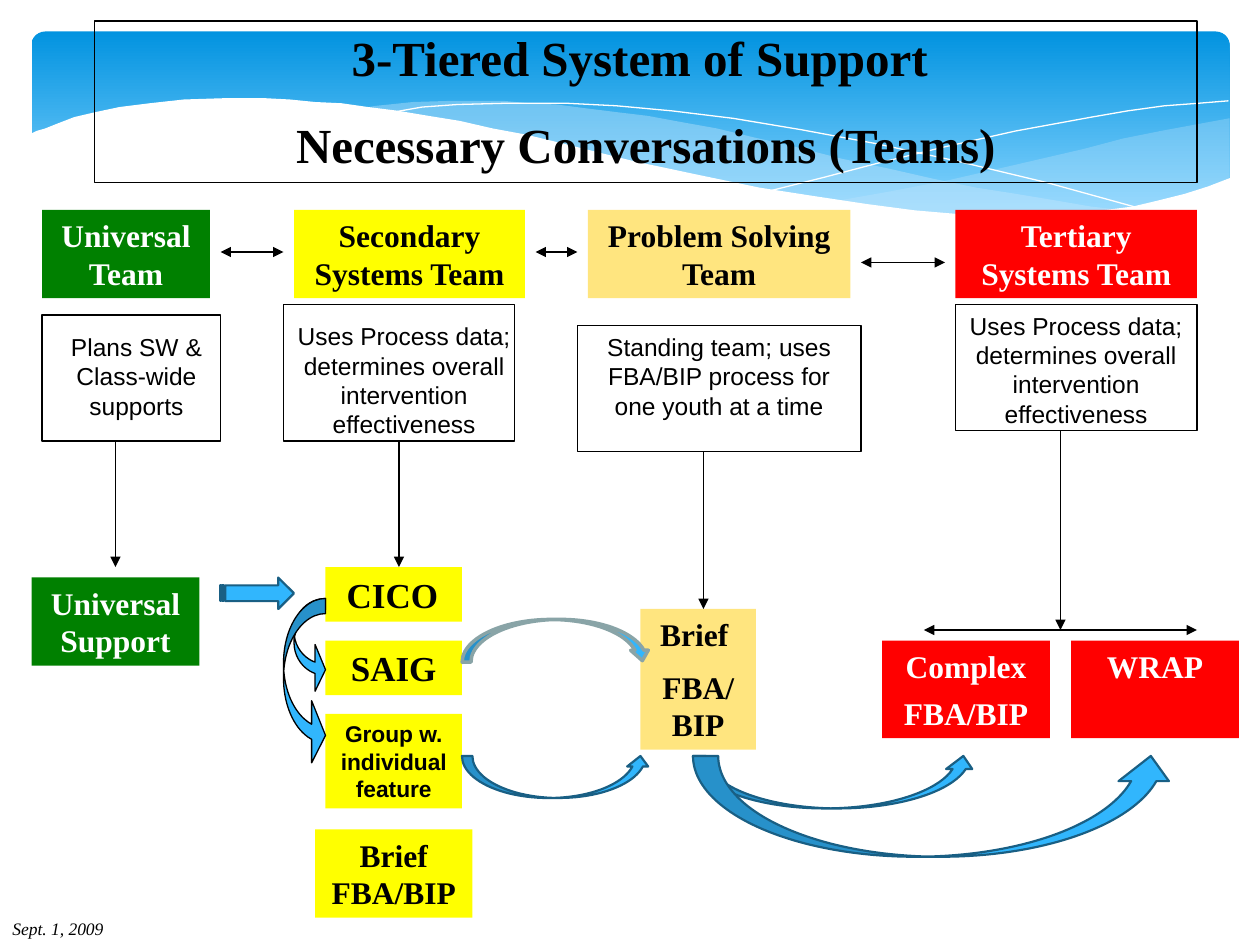
"""Build the slide of the 3-tiered support system and its teams."""
from lxml import etree
from pptx import Presentation
from pptx.dml.color import RGBColor
from pptx.enum.shapes import MSO_CONNECTOR, MSO_SHAPE as SHAPE
from pptx.enum.text import MSO_ANCHOR, MSO_AUTO_SIZE, PP_ALIGN as ALIGN
from pptx.oxml.ns import qn
from pptx.util import Inches, Pt

BLACK = RGBColor(0x00, 0x00, 0x00)
WHITE = RGBColor(0xFF, 0xFF, 0xFF)
GREEN = RGBColor(0x00, 0x80, 0x00)
YELLOW = RGBColor(0xFF, 0xFF, 0x00)
GOLD = RGBColor(0xFF, 0xCC, 0x00)
RED = RGBColor(0xFF, 0x00, 0x00)
SKY = RGBColor(0x31, 0xB6, 0xFD)
NAVY = RGBColor(0x19, 0x5F, 0x84)
GRAY = RGBColor(0x89, 0xA4, 0xA7)
DEEP = RGBColor(0x02, 0x93, 0xE0)
PALE = RGBColor(0x83, 0xD3, 0xFE)
MIST = RGBColor(0xC6, 0xE7, 0xFC)
SERIF, SANS = "Times New Roman", "Arial"
COLS, ROWS = 120, 90

RIGHT_WAVE = [(975, 94), (948, 99), (921, 104), (891, 110), (861, 118), (805, 131),
              (753, 143), (706, 152), (661, 160), (691, 164), (719, 167), (745, 169),
              (769, 171), (803, 172), (835, 172), (863, 170), (889, 166), (913, 162),
              (935, 156), (949, 152), (963, 147), (976, 141), (976, 94)]
MIDDLE_WAVE = [(893, 167), (866, 164), (837, 159), (807, 154), (775, 149), (741, 142),
               (706, 134), (668, 126), (629, 116), (598, 109), (569, 102), (541, 97),
               (514, 92), (489, 89), (465, 86), (442, 83), (420, 82), (399, 80),
               (361, 80), (328, 81), (299, 84), (286, 86), (323, 90), (362, 97),
               (404, 106), (449, 116), (491, 126), (530, 135), (566, 143), (601, 150),
               (634, 156), (665, 161), (695, 165), (722, 168), (748, 170), (773, 172),
               (807, 173), (838, 172), (867, 170), (893, 167)]
LONG_LINE = [(309, 90), (318, 88), (335, 85), (363, 83), (401, 82), (450, 82), (489, 84),
             (533, 88), (582, 94), (636, 103), (695, 114), (760, 128), (831, 145), (907, 166)]
SHORT_LINE = [(613, 151), (653, 141), (695, 130), (748, 117), (806, 104), (866, 93),
              (895, 88), (924, 84), (951, 82), (975, 80)]
WHITE_WAVE = [(977, 141), (959, 148), (940, 154), (920, 159), (899, 164), (875, 167),
              (850, 170), (823, 171), (793, 171), (761, 170), (726, 167), (688, 162),
              (648, 156), (603, 149), (555, 139), (503, 128), (447, 114), (418, 107),
              (391, 102), (365, 96), (340, 92), (316, 88), (292, 85), (271, 82),
              (250, 81), (230, 79), (211, 78), (177, 78), (146, 79), (119, 82),
              (95, 85), (76, 89), (59, 93), (46, 98), (36, 102), (29, 104), (23, 107),
              (23, 224), (977, 224)]


def write(tf, text, size=18, font=SERIF, color=BLACK, bold=False, italic=False,
          align=ALIGN.CENTER, gap=0):
    """Fill a text frame, one paragraph per line, with gap as a share of a line."""
    tf.word_wrap = True
    tf.auto_size = MSO_AUTO_SIZE.NONE
    tf.vertical_anchor = MSO_ANCHOR.TOP
    for i, line in enumerate(text.split("\n")):
        p = tf.add_paragraph() if i else tf.paragraphs[0]
        p.text, p.alignment = line, align
        if i:
            p.space_before = Pt(round(size * 1.15 * gap, 1))
        for r in p.runs:
            f = r.font
            f.name, f.size, f.bold, f.italic = font, Pt(size), bold, italic
            f.color.rgb = color


class Board:
    """Hold the current slide and draw on a grid of 120 columns and 90 rows."""

    def __init__(self, prs):
        """Add a slide with a title placeholder."""
        self.s = prs.slides.add_slide(prs.slide_layouts[5])
        self.col, self.row = prs.slide_width / COLS, prs.slide_height / ROWS

    def box(self, x, y, w, h):
        """Turn grid units into lengths."""
        return [int(x * self.col), int(y * self.row), int(w * self.col), int(h * self.row)]

    def paint(self, sp, fill=None, line=None, width=0.75, opacity=100):
        """Set fill, outline and opacity, without shadow."""
        sp.shadow.inherit = False
        if fill is None:
            sp.fill.background()
        else:
            sp.fill.solid()
            sp.fill.fore_color.rgb = fill
        if opacity < 100:
            color = sp.element.spPr.find(".//" + qn("a:srgbClr"))
            etree.SubElement(color, qn("a:alpha"), val=str(opacity * 1000))
        if line is None:
            sp.line.fill.background()
        else:
            sp.line.color.rgb, sp.line.width = line, Pt(width)
        return sp

    def shape(self, kind, at, adj=(), **style):
        """Draw a preset shape."""
        sp = self.s.shapes.add_shape(kind, *self.box(*at))
        for i, value in enumerate(adj):
            sp.adjustments[i] = value
        return self.paint(sp, **style)

    def wave(self, points, closed=True, **style):
        """Draw an outline from points in hundredths of an inch."""
        fb = self.s.shapes.build_freeform(*points[0], scale=Inches(0.01))
        fb.add_line_segments(points[1:], close=closed)
        return self.paint(fb.convert_to_shape(), **style)

    def title(self, at, text, **fmt):
        """Move the title placeholder to the front, frame it and fill it."""
        sp = self.s.shapes.title
        sp.element.getparent().append(sp.element)
        sp.left, sp.top, sp.width, sp.height = self.box(*at)
        sp.line.color.rgb, sp.line.width = BLACK, Pt(0.75)
        write(sp.text_frame, text, **fmt)

    def card(self, at, text, fill, opacity=100, **fmt):
        """Draw a filled rectangle with bold text."""
        sp = self.shape(SHAPE.RECTANGLE, at, fill=fill, opacity=opacity)
        write(sp.text_frame, text, bold=True, **fmt)

    def label(self, at, text, **fmt):
        """Add a text box."""
        write(self.s.shapes.add_textbox(*self.box(*at)).text_frame, text, **fmt)

    def arrow(self, x1, y1, x2, y2, both=False, source=None):
        """Draw a straight arrow, joined to the bottom of a source if given."""
        start, end = self.box(x1, y1, x2, y2)[:2], self.box(x2, y2, 0, 0)[:2]
        c = self.s.shapes.add_connector(MSO_CONNECTOR.STRAIGHT, *start, *end)
        c.line.color.rgb, c.line.width = BLACK, Pt(0.75)
        if source is not None:
            c.begin_connect(source, 2)
        ln = c.line._get_or_add_ln()
        for tag in ("a:headEnd", "a:tailEnd") if both else ("a:tailEnd",):
            etree.SubElement(ln, qn(tag), type="triangle")
        etree.SubElement(c.element.spPr, qn("a:effectLst"))


def main():
    """Compose and save the slide."""
    prs = Presentation()
    prs.slide_width, prs.slide_height = Inches(10), Inches(7.5)
    b = Board(prs)

    sky = b.shape(SHAPE.ROUNDED_RECTANGLE, (3, 3, 114.1, 18.7), adj=[0.07], fill=DEEP)
    sky.fill.gradient()
    sky.fill.gradient_angle = 270
    for stop, color, position in zip(sky.fill.gradient_stops, (DEEP, PALE), (0, 0.9)):
        stop.color.rgb, stop.position = color, position
    b.wave(RIGHT_WAVE, fill=MIST, opacity=29)
    b.wave(MIDDLE_WAVE, fill=MIST, opacity=40)
    for points in (LONG_LINE, SHORT_LINE):
        b.wave(points, closed=False, line=WHITE, width=0)
    b.wave(WHITE_WAVE, fill=WHITE)
    b.title((9, 2, 105, 15.4), "3-Tiered System of Support \nNecessary Conversations (Teams)",
            size=28, bold=True, gap=0.5)

    for x, w, text, fill, color, opacity in [
            (4, 16, "Universal\vTeam", GREEN, WHITE, 100),
            (28, 22, "Secondary Systems Team", YELLOW, BLACK, 100),
            (56, 25, "Problem Solving Team", GOLD, BLACK, 50),
            (91, 23, "Tertiary Systems Team", RED, WHITE, 100)]:
        b.card((x, 20, w, 8.4), text, fill, opacity, color=color)
    for x1, x2, y in [(21, 27, 24), (51, 55, 24), (82, 90, 25)]:
        b.arrow(x1, y, x2, y, both=True)

    process = "Uses Process data; determines overall intervention effectiveness"
    frames = []
    for frame, at, text in [
            ((4, 30, 17, 12), (5, 31, 16, 9.7), "Plans SW & Class-wide supports"),
            ((27, 29, 22, 13), (27, 30, 23, 12.5), process),
            ((55, 31, 27, 12), (56, 31, 25, 9.7),
             "Standing team; uses FBA/BIP process for one youth at a time"),
            ((91, 29, 23, 12), (91, 29, 23, 12.5), process)]:
        frames.append(b.shape(SHAPE.RECTANGLE, frame, line=BLACK))
        b.label(at, text, size=14, font=SANS)

    b.card((3, 55, 16, 8.4), "Universal Support", GREEN, color=WHITE)
    b.card((31, 54, 13, 5.2), " CICO", YELLOW, size=20, align=ALIGN.LEFT)
    b.card((31, 61, 13, 5.2), "SAIG", YELLOW, size=20)
    b.card((31, 68, 13, 9), "Group w. individual\nfeature", YELLOW, size=13, font=SANS)
    b.card((30, 79, 15, 8.4), "Brief FBA/BIP", YELLOW)
    b.card((61, 58, 11, 13.4), "Brief \nFBA/BIP", GOLD, 50, gap=0.4)
    for x, text in [(84, "Complex\nFBA/BIP"), (102, "WRAP")]:
        b.card((x, 61, 16, 9.3), text, RED, color=WHITE, gap=0.25)

    for x, y1, y2, source in [(11, 42, 54, None), (38, 42, 54, frames[1]),
                              (67, 43, 58, None), (101, 41, 60, None)]:
        b.arrow(x, y1, x, y2, source=source)
    b.arrow(88, 60, 114, 60, both=True)

    for at in [(28, 57, 3, 9), (27, 57, 4, 16)]:
        b.shape(SHAPE.CURVED_RIGHT_ARROW, at, adj=[0.36, 1.48, 0.33], fill=SKY, line=BLACK)
    b.shape(SHAPE.STRIPED_RIGHT_ARROW, (21, 55, 7, 3), fill=SKY, line=NAVY, width=1.25)
    for at in [(66, 72, 27, 5), (66, 72, 46, 9.6), (44, 72, 18, 4)]:
        b.shape(SHAPE.CURVED_UP_ARROW, at, fill=SKY, line=NAVY, width=1.25)
    over = b.shape(SHAPE.CURVED_UP_ARROW, (44, 59, 18, 4), adj=[0.21, 0.42, 0.25],
                   fill=SKY, line=GRAY, width=2)
    over.rotation = 359.5
    over.element.spPr.find(qn("a:xfrm")).set("flipV", "1")

    b.label((0, 86.8, 14, 3.2), "Sept. 1, 2009", size=10, italic=True, align=ALIGN.LEFT)
    prs.save("out.pptx")


if __name__ == "__main__":
    main()
